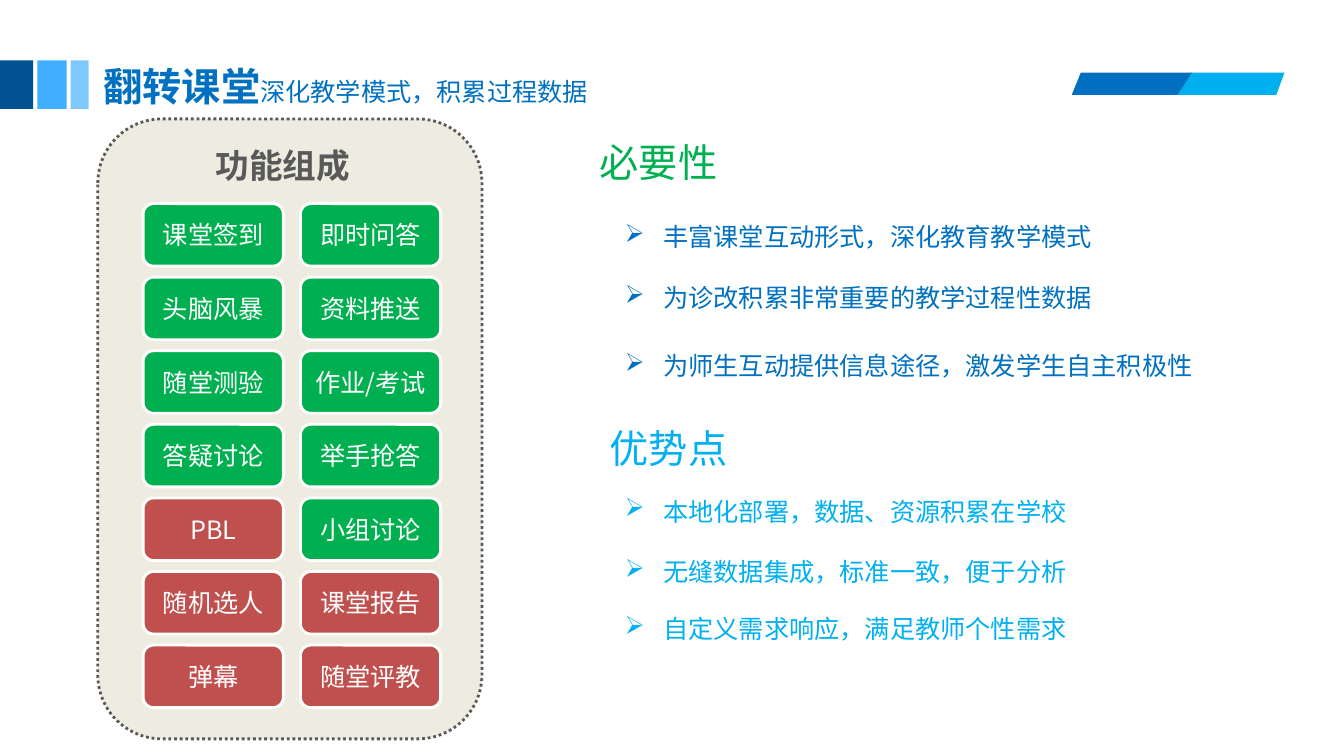
from dataclasses import dataclass

from lxml import etree
from pptx import Presentation
from pptx.dml.color import RGBColor
from pptx.enum.dml import MSO_LINE
from pptx.enum.shapes import MSO_SHAPE
from pptx.enum.text import MSO_ANCHOR, MSO_AUTO_SIZE, PP_ALIGN
from pptx.oxml.ns import qn
from pptx.util import Inches, Pt

ROUNDED = MSO_SHAPE.ROUNDED_RECTANGLE
RECTANGLE = MSO_SHAPE.RECTANGLE
DOTTED = MSO_LINE.ROUND_DOT
TOP, MIDDLE = MSO_ANCHOR.TOP, MSO_ANCHOR.MIDDLE
CENTER = PP_ALIGN.CENTER
GROW = MSO_AUTO_SIZE.SHAPE_TO_FIT_TEXT


@dataclass(frozen=True)
class Theme:
    font: str = "Noto Sans CJK SC"
    title_blue: str = "0070C0"
    sky: str = "00B0F0"
    green: str = "00B050"
    red: str = "C0504D"
    gray: str = "595959"
    cream: str = "EEECE1"
    white: str = "FFFFFF"
    ribbon_dark: str = "006FC0"
    ribbon_light: str = "00AFEF"
    bars: tuple = ("005390", "40AFFF", "80C9FF")
    heading_size: int = 28
    panel_size: int = 24
    body_size: int = 18


THEME = Theme()

FEATURES = [
    ("课堂签到", "即时问答"),
    ("头脑风暴", "资料推送"),
    ("随堂测验", "作业/考试"),
    ("答疑讨论", "举手抢答"),
    ("PBL", "小组讨论"),
    ("随机选人", "课堂报告"),
    ("弹幕", "随堂评教"),
]
PLANNED = {"PBL", "随机选人", "课堂报告", "弹幕", "随堂评教"}

NEEDS = [
    (2.05, "丰富课堂互动形式，深化教育教学模式"),
    (2.66, "为诊改积累非常重要的教学过程性数据"),
    (3.33, "为师生互动提供信息途径，激发学生自主积极性"),
]
STRENGTHS = [
    (4.87, "本地化部署，数据、资源积累在学校"),
    (5.47, "无缝数据集成，标准一致，便于分析"),
    (6.04, "自定义需求响应，满足教师个性需求"),
]


def add_run(paragraph, text, size, color, bold=False):
    run = paragraph.add_run()
    run.text = text
    run.font.name = THEME.font
    run.font.size = Pt(size)
    run.font.bold = bold
    run.font.color.rgb = RGBColor.from_string(color)
    east_asian = etree.SubElement(run.font._element, qn("a:ea"))
    east_asian.set("typeface", THEME.font)


def paint(shape, fill, line=None):
    shape.shadow.inherit = False
    shape.fill.solid()
    shape.fill.fore_color.rgb = RGBColor.from_string(fill)
    if line:
        shape.line.color.rgb = RGBColor.from_string(line)
        shape.line.width = Pt(2)
    else:
        shape.line.fill.background()


def add_block(slide, kind, box, fill, line=None):
    block = slide.shapes.add_shape(kind, *map(Inches, box))
    paint(block, fill, line)
    return block


def add_ribbon(slide, corners, fill):
    points = [(Inches(x), Inches(y)) for x, y in corners]
    builder = slide.shapes.build_freeform(*points[0], scale=1.0)
    builder.add_line_segments(points[1:], close=True)
    paint(builder.convert_to_shape(), fill)


def add_text(slide, box, wrap=False, anchor=TOP):
    frame = slide.shapes.add_textbox(*map(Inches, box)).text_frame
    frame.word_wrap = wrap
    frame.vertical_anchor = anchor
    if anchor == TOP:
        frame.auto_size = GROW
    return frame.paragraphs[0]


def add_heading(slide, box, text, size, color, bold=False):
    add_run(add_text(slide, box), text, size, color, bold)


def add_bullet(slide, box, text, color, wrap=False, anchor=TOP):
    paragraph = add_text(slide, box, wrap, anchor)
    properties = paragraph._p.get_or_add_pPr()
    properties.set("marL", str(Inches(0.38)))
    properties.set("indent", str(-Inches(0.38)))
    etree.SubElement(properties, qn("a:buChar")).set("char", "➢")
    add_run(paragraph, text, THEME.body_size, color)


def add_feature(slide, left, top, label):
    fill = THEME.red if label in PLANNED else THEME.green
    feature = add_block(slide, ROUNDED, (left, top, 1.39, 0.62), fill, THEME.white)
    frame = feature.text_frame
    frame.word_wrap = True
    frame.vertical_anchor = MIDDLE
    frame.paragraphs[0].alignment = CENTER
    add_run(frame.paragraphs[0], label, THEME.body_size, THEME.white)


def add_header(slide):
    add_ribbon(slide, [(11.81, 0.72), (11.68, 0.94), (12.66, 0.94), (12.74, 0.72)],
               THEME.ribbon_light)
    add_ribbon(slide, [(11.82, 0.72), (10.72, 0.72), (10.63, 0.94), (11.68, 0.94)],
               THEME.ribbon_dark)
    for left, width, fill in zip((0, 0.37, 0.7), (0.33, 0.29, 0.18), THEME.bars):
        add_block(slide, RECTANGLE, (left, 0.6, width, 0.48), fill)
    title = add_text(slide, (0.93, 0.48, 7.11, 0.62), wrap=True)
    title.line_spacing = 1.2
    add_run(title, "翻转课堂", THEME.heading_size, THEME.title_blue, bold=True)
    add_run(title, "深化教学模式，积累过程数据", THEME.body_size, THEME.title_blue)


def add_feature_panel(slide):
    panel = add_block(slide, ROUNDED, (0.97, 1.18, 3.81, 6.15), THEME.cream, THEME.gray)
    panel.line.dash_style = DOTTED
    for row, labels in enumerate(FEATURES):
        for column, label in enumerate(labels):
            add_feature(slide, 1.42 + 1.56 * column, 2.02 + 0.73 * row, label)
    add_heading(slide, (2.04, 1.39, 1.55, 0.5), "功能组成",
                THEME.panel_size, THEME.gray, bold=True)


def main():
    deck = Presentation()
    deck.slide_width, deck.slide_height = Inches(13.33), Inches(7.5)
    slide = deck.slides.add_slide(deck.slide_layouts[6])
    add_header(slide)
    add_feature_panel(slide)
    add_heading(slide, (5.85, 1.32, 1.38, 0.57), "必要性",
                THEME.heading_size, THEME.green)
    for top, need in NEEDS:
        add_bullet(slide, (6.1, top, 7.2, 0.59), need, THEME.title_blue,
                   wrap=True, anchor=MIDDLE)
    add_heading(slide, (5.95, 4.16, 1.38, 0.57), "优势点",
                THEME.heading_size, THEME.sky)
    for top, strength in STRENGTHS:
        add_bullet(slide, (6.1, top, 4.62, 0.4), strength, THEME.sky)
    deck.save("out.pptx")


if __name__ == "__main__":
    main()
